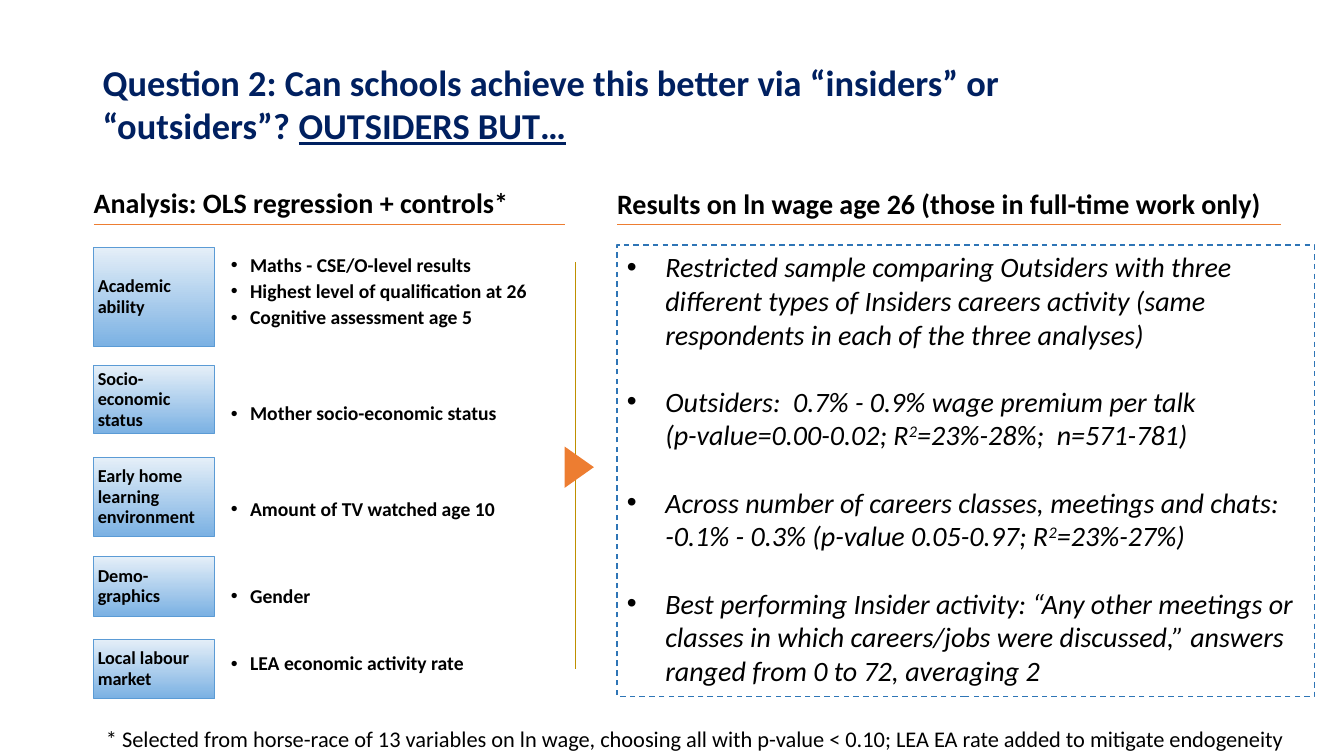
import pptx
import pptx.dml.color
import pptx.enum.dml
import pptx.enum.shapes
import pptx.enum.text
import pptx.oxml
import pptx.oxml.ns
import pptx.util

RGB = pptx.dml.color.RGBColor
SHAPES = pptx.enum.shapes.MSO_SHAPE
ANCHOR = pptx.enum.text.MSO_ANCHOR
PX = 9144  # EMU, 100 px to the inch

BLACK = RGB(0x00, 0x00, 0x00)
NAVY = RGB(0x00, 0x20, 0x60)
ORANGE = RGB(0xED, 0x7D, 0x31)
GOLD = RGB(0xBF, 0x90, 0x00)
BLUE = RGB(0x5B, 0x9B, 0xD5)
DARK_BLUE = RGB(0x2E, 0x75, 0xB6)
PALE_BLUE = RGB(0xE5, 0xEF, 0xF8)
MID_BLUE = RGB(0x7B, 0xB1, 0xE3)


def write(shape, lines, size, color=BLACK, bold=None, italic=None, accent=None,
          inset=(0, 0), anchor=ANCHOR.TOP, spacing=0.93, before=3, indent=0):
    """Fill a shape with paragraphs; text between ^ marks takes the accent."""
    frame = shape.text_frame
    frame.word_wrap = True
    frame.vertical_anchor = anchor
    frame.margin_left = frame.margin_right = inset[0] * PX
    frame.margin_top = frame.margin_bottom = inset[1] * PX
    for number, line in enumerate(lines):
        para = frame.add_paragraph() if number else frame.paragraphs[0]
        para.alignment = pptx.enum.text.PP_ALIGN.LEFT
        para.line_spacing = spacing
        para.space_before = pptx.util.Pt(before if number else 0)
        if indent:
            properties = para._p.get_or_add_pPr()
            properties.set("marL", str(indent * PX))
            properties.set("indent", str(-indent * PX))
            properties.append(pptx.oxml.parse_xml(
                f'<a:buFont {pptx.oxml.ns.nsdecls("a")} typeface="Arial"/>'))
            properties.append(pptx.oxml.parse_xml(
                f'<a:buChar {pptx.oxml.ns.nsdecls("a")} char="•"/>'))
        for row, row_text in enumerate(line.split("\n")):
            if row:
                para.add_line_break()
            for position, piece in enumerate(row_text.split("^")):
                if not piece:
                    continue
                span = para.add_run()
                span.text = piece
                span.font.name = "Calibri"
                span.font.size = pptx.util.Pt(size)
                span.font.color.rgb = color
                span.font.bold = bold
                span.font.italic = italic
                if position % 2 and accent == "underline":
                    span.font.underline = True
                elif position % 2 and accent == "superscript":
                    span._r.get_or_add_rPr().set("baseline", "30000")


def draw_line(left, top, right, bottom, color, width):
    line = page.shapes.add_connector(
        pptx.enum.shapes.MSO_CONNECTOR.STRAIGHT,
        left * PX, top * PX, right * PX, bottom * PX)
    line.line.color.rgb = color
    line.line.width = pptx.util.Pt(width)
    line._element.spPr.append(pptx.oxml.parse_xml(
        f'<a:effectLst {pptx.oxml.ns.nsdecls("a")}/>'))


deck = pptx.Presentation()
deck.slide_width = 1333 * PX
deck.slide_height = 750 * PX
page = deck.slides.add_slide(deck.slide_layouts[6])

# Title
title = page.shapes.add_textbox(92 * PX, 30 * PX, 1063 * PX, 145 * PX)
write(title, ["Question 2: Can schools achieve this better via “insiders” or "
              "“outsiders”? ^OUTSIDERS BUT…^"],
      size=26, color=NAVY, bold=True, accent="underline", inset=(10, 5),
      anchor=ANCHOR.MIDDLE, spacing=1.0)

# Column headings with their rules
for left, top, width, rule_end, heading in (
        (93, 187, 606, 560, "Analysis: OLS regression + controls*"),
        (612, 188, 660, 1271,
         "Results on ln wage age 26 (those in full-time work only)")):
    draw_line(left, 223, rule_end, 223, ORANGE, 0.5)
    box = page.shapes.add_textbox(left * PX, top * PX, width * PX, 31 * PX)
    write(box, [heading], size=20, bold=True)

# Control groups: labelled box and its variables
controls = (
    (245, 99, "Academic ability", 253,
     ["Maths - CSE/O-level results", "Highest level of qualification at 26",
      "Cognitive assessment age 5"]),
    (363, 67, "Socio-economic status", 400, ["Mother socio-economic status"]),
    (454, 78, "Early home learning environment", 495,
     ["Amount of TV watched age 10"]),
    (552, 59, "Demo-graphics", 581, ["Gender"]),
    (634, 59, "Local labour market", 648, ["LEA economic activity rate"]),
)
for top, height, label, list_top, variables in controls:
    box = page.shapes.add_shape(
        SHAPES.RECTANGLE, 93 * PX, top * PX, 120 * PX, height * PX)
    box.shadow.inherit = False
    box.fill.gradient()
    box.fill.gradient_angle = 270
    for stop, color in zip(box.fill.gradient_stops, (PALE_BLUE, MID_BLUE)):
        stop.color.rgb = color
    box.line.color.rgb = BLUE
    box.line.width = pptx.util.Pt(0.5)
    write(box, [label], size=13, bold=True, inset=(4, 4), anchor=ANCHOR.MIDDLE)

    box = page.shapes.add_textbox(
        229 * PX, list_top * PX, 335 * PX, (26 * len(variables) - 4) * PX)
    write(box, variables, size=14, bold=True, indent=19)

# Divider with its pointer
draw_line(571, 260, 571, 664, GOLD, 1)
pointer = page.shapes.add_shape(
    SHAPES.ISOSCELES_TRIANGLE, 554 * PX, 449 * PX, 41 * PX, 29 * PX)
pointer.rotation = 90
pointer.shadow.inherit = False
pointer.fill.solid()
pointer.fill.fore_color.rgb = ORANGE
pointer.line.fill.background()

# Results
results = page.shapes.add_shape(
    SHAPES.RECTANGLE, 612 * PX, 243 * PX, 692 * PX, 448 * PX)
results.shadow.inherit = False
results.fill.background()
results.line.color.rgb = DARK_BLUE
results.line.width = pptx.util.Pt(1)
results.line.dash_style = pptx.enum.dml.MSO_LINE.DASH
write(results, [
    "Restricted sample comparing Outsiders with three different types of "
    "Insiders careers activity (same respondents in each of the three analyses)",
    "Outsiders:  0.7% - 0.9% wage premium per talk\n"
    "(p-value=0.00-0.02; R^2^=23%-28%;  n=571-781)",
    "Across number of careers classes, meetings and chats:\n"
    "-0.1% - 0.3% (p-value 0.05-0.97; R^2^=23%-27%)",
    "Best performing Insider activity: “Any other meetings or classes in which "
    "careers/jobs were discussed,” answers ranged from 0 to 72, averaging 2",
], size=20, italic=True, accent="superscript", inset=(10, 5), spacing=1.0,
    before=24, indent=38)

# Footnote
footnote = page.shapes.add_textbox(105 * PX, 722 * PX, 1198 * PX, 25 * PX)
write(footnote, ["* Selected from horse-race of 13 variables on ln wage, choosing "
                 "all with p-value < 0.10; LEA EA rate added to mitigate "
                 "endogeneity"], size=16)

deck.save("out.pptx")
